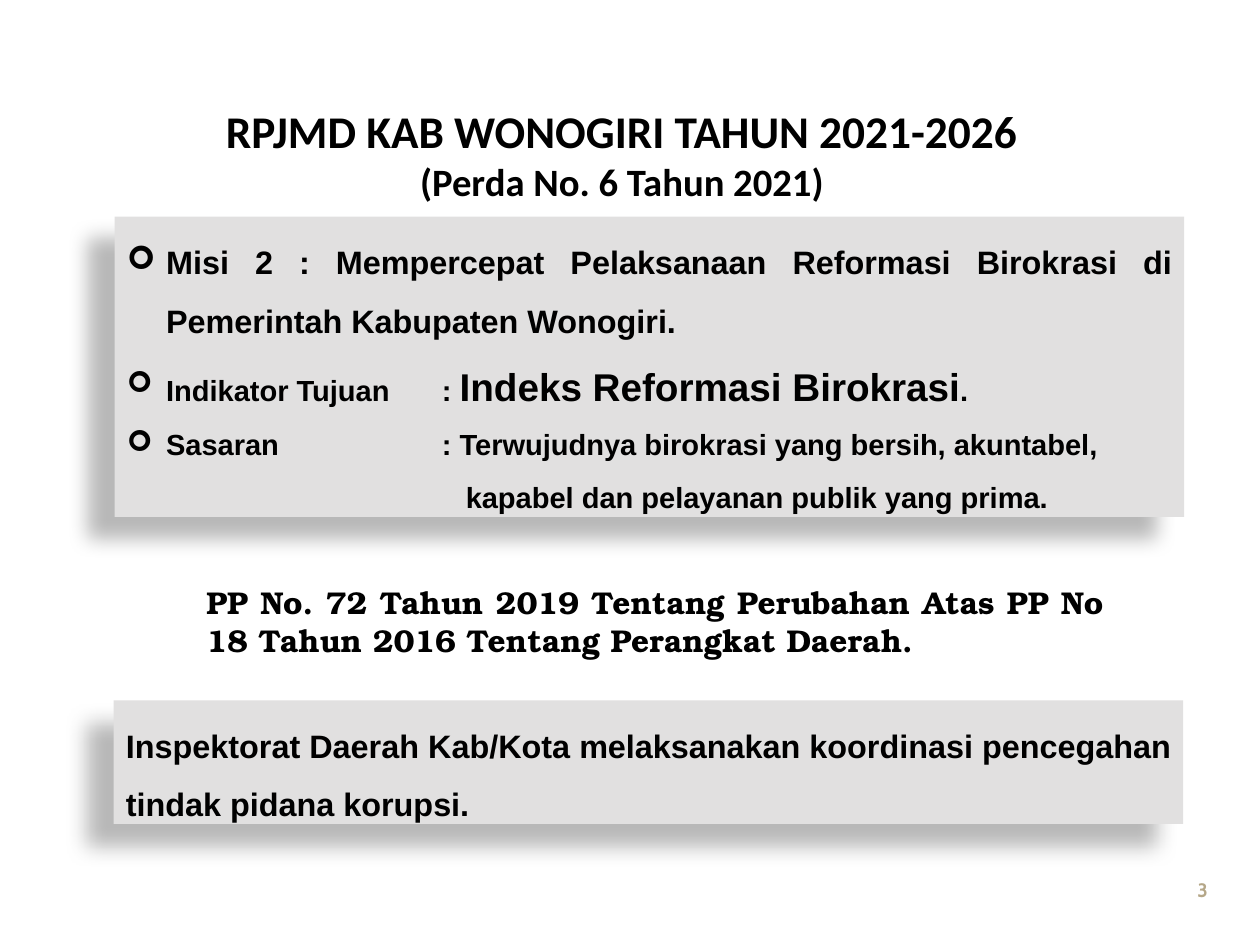
from lxml.etree import SubElement as Sub
from pptx import Presentation
from pptx.dml.color import RGBColor as Rgb
from pptx.enum.shapes import MSO_SHAPE as Kind
from pptx.enum.text import MSO_ANCHOR as Anchor, MSO_AUTO_SIZE as Auto, PP_ALIGN as Align
from pptx.oxml.ns import qn
from pptx.util import Cm, Pt


def color(text):
    return Rgb.from_string(text)


class Deck:
    """Holds the style and the current slide."""

    ink, panel, gold = "000000", "E1E0E0", "B5A788"
    sans, head, serif, small = "Arial", "Calibri", "TeX Gyre Bonum", "Cabin"
    hang, stop = 0.79, 6.35

    def __init__(self, wide, high):
        self.prs = Presentation()
        self.prs.slide_width, self.prs.slide_height = Cm(wide), Cm(high)
        self.slide = self.prs.slides.add_slide(self.prs.slide_layouts[5])

    def words(self, frame, paras, font, align=Align.JUSTIFY, space=1, tint=ink):
        frame.word_wrap = True
        frame.auto_size = Auto.NONE
        frame.vertical_anchor = Anchor.TOP
        for num, (runs, left, mark) in enumerate(paras):
            para = frame.add_paragraph() if num else frame.paragraphs[0]
            para.alignment, para.line_spacing = align, space
            self.indent(para, left, mark)
            for text, size in runs:
                run = para.add_run()
                run.text = text
                face = run.font
                face.name, face.size, face.bold = font, Pt(size), True
                face.color.rgb = color(tint)

    def indent(self, para, left, mark):
        props = para._p.get_or_add_pPr()
        props.set("marL", str(Cm(left)))
        props.set("indent", str(-Cm(left) if mark else 0))
        if mark:
            Sub(props, qn("a:buFont"), typeface="Wingdings")
            Sub(props, qn("a:buChar"), char=mark)
            tabs = Sub(props, qn("a:tabLst"))
            Sub(tabs, qn("a:tab"), pos=str(Cm(self.stop)), algn="l")

    def title(self, box, paras):
        shape = self.slide.shapes.title
        shape.left, shape.top, shape.width, shape.height = map(Cm, box)
        self.words(shape.text_frame, paras, self.head, Align.CENTER)

    def card(self, box, paras):
        shape = self.slide.shapes.add_shape(Kind.RECTANGLE, *map(Cm, box))
        shape.fill.solid()
        shape.fill.fore_color.rgb = color(self.panel)
        shape.line.fill.background()
        self.shade(shape)
        self.words(shape.text_frame, paras, self.sans, space=1.5)

    def shade(self, shape):
        cast = Sub(Sub(shape._element.spPr, qn("a:effectLst")), qn("a:outerShdw"),
                   blurRad=str(Pt(11.8)), dist=str(Pt(19.7)),
                   dir=str(141 * 60000), algn="tl", rotWithShape="0")
        tone = Sub(cast, qn("a:srgbClr"), val=self.ink)
        Sub(tone, qn("a:alpha"), val="28000")

    def label(self, box, paras, font, **style):
        shape = self.slide.shapes.add_textbox(*map(Cm, box))
        self.words(shape.text_frame, paras, font, **style)
        return shape.text_frame

    def number(self, box, text):
        frame = self.label(box, [([(text, 11.1)], 0, None)], self.small,
                           align=Align.CENTER, tint=self.gold)
        frame.margin_left = frame.margin_right = 0
        frame.margin_top = frame.margin_bottom = 0
        frame.vertical_anchor = Anchor.MIDDLE


def main():
    deck = Deck(25.4, 19.05)
    mark, hang = "➢", deck.hang
    deck.card((2.31, 4.37, 21.56, 6.05), [
        ([("Misi 2 : Mempercepat Pelaksanaan Reformasi Birokrasi di "
           "Pemerintah Kabupaten Wonogiri.", 18.5)], hang, mark),
        ([("Indikator Tujuan\t: ", 16.6), ("Indeks Reformasi Birokrasi", 22.1),
          (".", 16.6)], hang, mark),
        ([("Sasaran\t: Terwujudnya birokrasi yang bersih, akuntabel,", 16.6)],
         hang, mark),
        ([("kapabel dan pelayanan publik yang prima.", 16.6)], 6.83, None),
    ])
    deck.title((1.98, 1.96, 21.11, 2.51), [
        ([("RPJMD KAB WONOGIRI TAHUN 2021-2026", 25.9)], 0, None),
        ([("(Perda No. 6 Tahun 2021)", 22.1)], 0, None),
    ])
    deck.label((3.91, 11.63, 18.59, 1.8), [
        ([("PP No. 72 Tahun 2019 Tentang Perubahan Atas PP No 18 Tahun 2016 "
           "Tentang Perangkat Daerah.", 18)], 0, None),
    ], deck.serif)
    deck.card((2.29, 14.12, 21.56, 2.49), [
        ([("Inspektorat Daerah Kab/Kota melaksanakan koordinasi pencegahan "
           "tindak pidana korupsi.", 18.5)], 0, None),
    ])
    deck.number((23.57, 17.42, 1.35, 1.02), "3")
    deck.prs.save("out.pptx")


if __name__ == "__main__":
    main()
